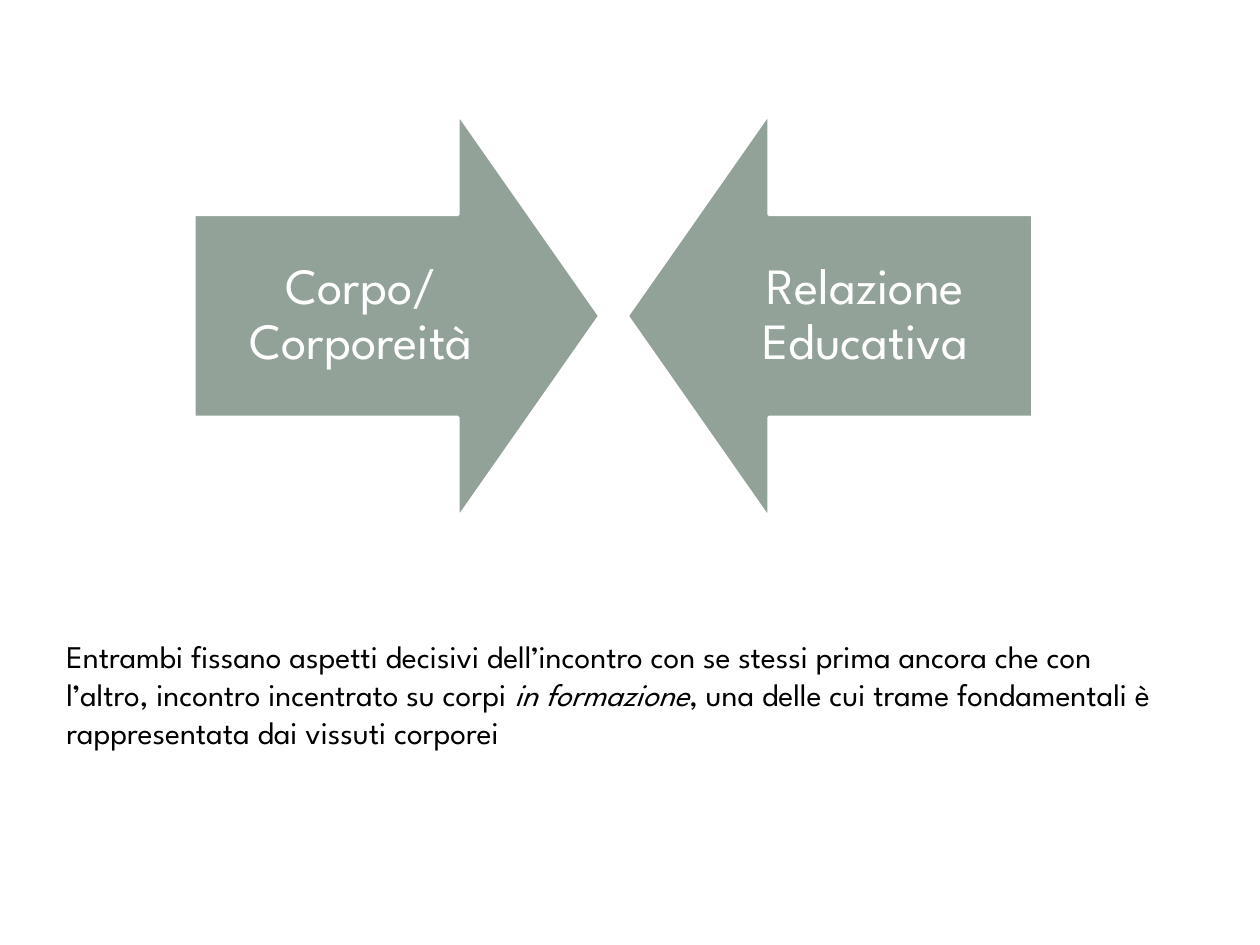
from pptx import Presentation
from pptx.dml.color import RGBColor
from pptx.enum.shapes import MSO_SHAPE
from pptx.enum.text import MSO_ANCHOR, PP_ALIGN
from pptx.util import Emu, Pt

ARROWS = [
    (MSO_SHAPE.RIGHT_ARROW, "Corpo/ Corporeità"),
    (MSO_SHAPE.LEFT_ARROW, "Relazione Educativa"),
]
# (text, italic)
STATEMENT = [
    ("Entrambi fissano aspetti decisivi dell’incontro con se stessi prima "
     "ancora che con l’altro, incontro incentrato su corpi ", False),
    ("in formazione", True),
    (", una delle cui trame fondamentali è rappresentata dai vissuti corporei", False),
]

THEME = {
    "font": "League Spartan",
    "arrow": RGBColor(0x93, 0xA2, 0x99),
    "white": RGBColor(0xFF, 0xFF, 0xFF),
    "black": RGBColor(0x00, 0x00, 0x00),
    "arrow_size": Pt(29),
    "body_size": Pt(18),
    "outline": Pt(2),
}

ARROW_LEFT, ARROW_TOP, ARROW_SIDE, ARROW_GAP = 194, 113, 406, 27
ARROW_INSET = 29
STATEMENT_BOX = (54, 631, 1131, 127)


def px(value):
    return Emu(round(value * 914400 / 126))


def style_run(run, size, color, italic=False):
    font = run.font
    font.name, font.size, font.italic = THEME["font"], size, italic
    font.color.rgb = color


def add_arrow(slide, kind, label, left):
    shape = slide.shapes.add_shape(
        kind, px(left), px(ARROW_TOP), px(ARROW_SIDE), px(ARROW_SIDE))
    shape.shadow.inherit = False
    shape.adjustments[0], shape.adjustments[1] = 0.5, 0.35
    shape.fill.solid()
    shape.fill.fore_color.rgb = THEME["arrow"]
    shape.line.color.rgb = THEME["white"]
    shape.line.width = THEME["outline"]

    frame = shape.text_frame
    frame.text = label
    frame.word_wrap = True
    frame.vertical_anchor = MSO_ANCHOR.MIDDLE
    frame.margin_left = frame.margin_right = px(ARROW_INSET)
    frame.margin_top = frame.margin_bottom = px(ARROW_INSET)
    paragraph = frame.paragraphs[0]
    paragraph.alignment = PP_ALIGN.CENTER
    paragraph.line_spacing = 0.9
    style_run(paragraph.runs[0], THEME["arrow_size"], THEME["white"])


def add_statement(slide):
    frame = slide.shapes.add_textbox(*map(px, STATEMENT_BOX)).text_frame
    frame.word_wrap = True
    for text, italic in STATEMENT:
        run = frame.paragraphs[0].add_run()
        run.text = text
        style_run(run, THEME["body_size"], THEME["black"], italic)


def main():
    presentation = Presentation()
    presentation.slide_width, presentation.slide_height = px(1260), px(945)
    slide = presentation.slides.add_slide(presentation.slide_layouts[6])
    for index, (kind, label) in enumerate(ARROWS):
        add_arrow(slide, kind, label, ARROW_LEFT + index * (ARROW_SIDE + ARROW_GAP))
    add_statement(slide)
    presentation.save("out.pptx")


if __name__ == "__main__":
    main()
